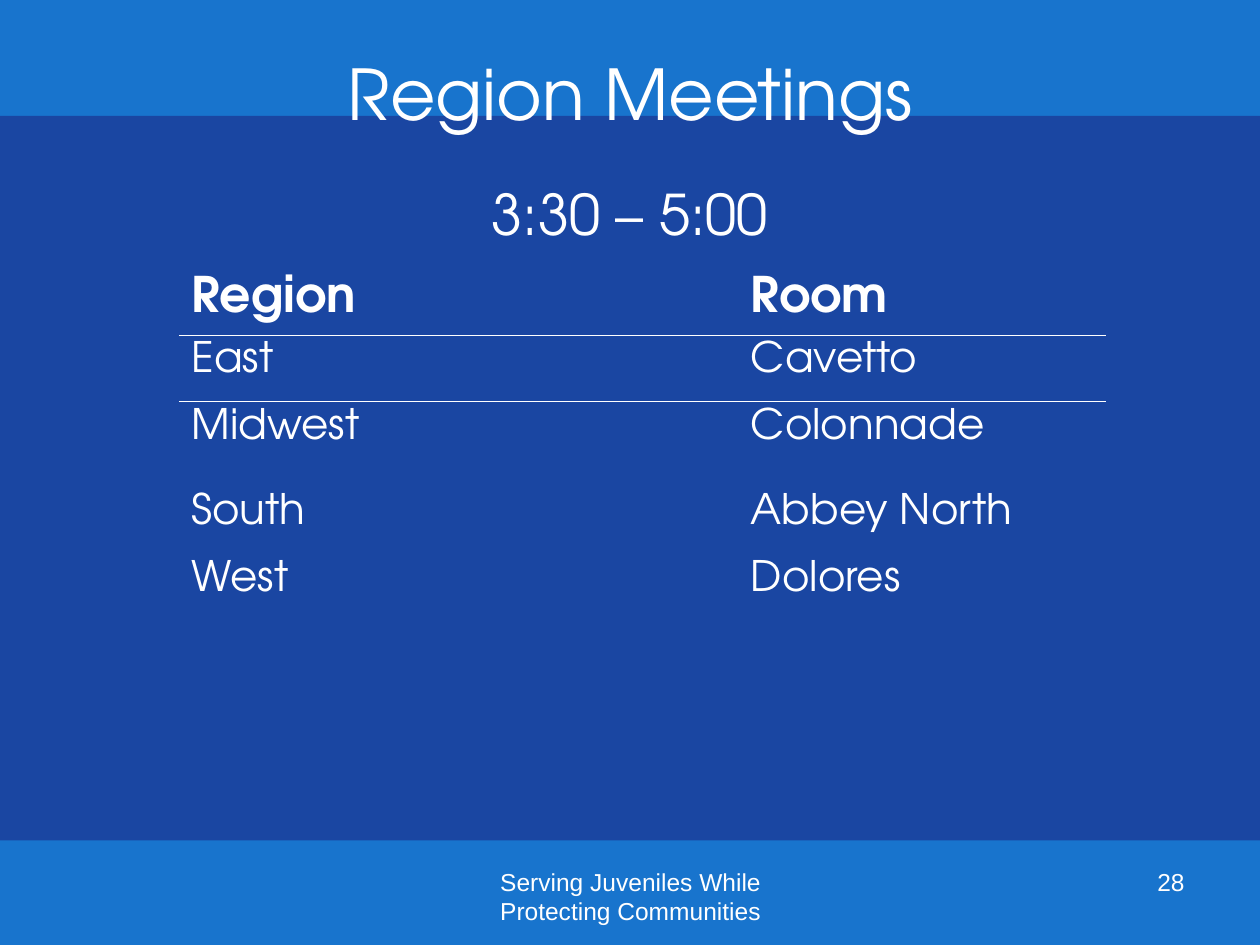
from dataclasses import dataclass

from lxml import etree
from pptx import Presentation
from pptx.dml.color import RGBColor
from pptx.enum.shapes import MSO_SHAPE
from pptx.enum.text import MSO_ANCHOR, PP_ALIGN
from pptx.oxml.ns import qn
from pptx.util import Inches, Pt

CENTER, RIGHT, LEFT = PP_ALIGN.CENTER, PP_ALIGN.RIGHT, PP_ALIGN.LEFT
TOP = MSO_ANCHOR.TOP
RECT = MSO_SHAPE.RECTANGLE

SKY = RGBColor(0x18, 0x74, 0xCD)
NAVY = RGBColor(0x1C, 0x32, 0x90)
WHITE = RGBColor(0xFF, 0xFF, 0xFF)
HEAD_FONT = "TeX Gyre Adventor"
FOOT_FONT = "Arial"


@dataclass
class Line:
    text: str
    size: int
    font: str = HEAD_FONT
    align: PP_ALIGN = LEFT
    bold: bool = False
    gap: float = 0
    pitch: float = 1.0


@dataclass
class Box:
    left: float
    top: float
    width: float
    height: float
    lines: list[Line]


BOXES = [
    Box(3.42, 6.83, 3.17, 0.52,
        [Line("Serving Juveniles While Protecting Communities", 14,
              FOOT_FONT, CENTER)]),
    Box(7.17, 6.83, 2.33, 0.52, [Line("28", 14, FOOT_FONT, RIGHT)]),
    Box(0, 0.02, 10, 2.17,
        [Line("Region Meetings", 40, align=CENTER, pitch=1.5),
         Line("3:30 – 5:00", 32, align=CENTER, gap=6.4, pitch=1.5)]),
]

ROOMS = [
    ("Region", "Room"),
    ("East", "Cavetto"),
    ("Midwest", "Colonnade"),
    ("South", "Abbey North"),
    ("West", "Dolores"),
]
COLS = [4.44, 2.92]
ROWS = [0.52, 0.53, 0.68, 0.53, 0.53]
RULED = (0, 1)  # rows with a rule below


def write(para, line: Line) -> None:
    para.text = line.text
    para.alignment = line.align
    para.line_spacing = line.pitch
    para.space_before = Pt(line.gap)
    font = para.font
    font.name = line.font
    font.size = Pt(line.size)
    font.bold = line.bold
    font.color.rgb = WHITE


def add_box(slide, box: Box) -> None:
    frame = slide.shapes.add_textbox(
        Inches(box.left), Inches(box.top),
        Inches(box.width), Inches(box.height)).text_frame
    frame.word_wrap = True
    for i, line in enumerate(box.lines):
        write(frame.add_paragraph() if i else frame.paragraphs[0], line)


def add_band(slide) -> None:
    band = slide.shapes.add_shape(
        RECT, 0, Inches(0.92), Inches(10), Inches(5.75))
    band.shadow.inherit = False
    band.line.fill.background()
    band.fill.solid()
    band.fill.fore_color.rgb = NAVY
    color = band.fill._xPr.find(".//" + qn("a:srgbClr"))
    etree.SubElement(color, qn("a:alpha"), val="69000")


def set_edge(cell, side: str, shown: bool) -> None:
    """Rule one side of a cell in white, or clear it."""
    edge = etree.SubElement(cell._tc.get_or_add_tcPr(), qn("a:" + side),
                            w=str(Pt(0.75)))
    if shown:
        fill = etree.SubElement(edge, qn("a:solidFill"))
        etree.SubElement(fill, qn("a:srgbClr"), val=str(WHITE))
    else:
        etree.SubElement(edge, qn("a:noFill"))


def add_rooms(slide) -> None:
    table = slide.shapes.add_table(
        len(ROWS), len(COLS), Inches(1.42), Inches(2.14),
        Inches(sum(COLS)), Inches(sum(ROWS))).table
    table.first_row = table.horz_banding = False
    for col, width in zip(table.columns, COLS):
        col.width = Inches(width)
    for r, (row, names) in enumerate(zip(table.rows, ROOMS)):
        row.height = Inches(ROWS[r])
        head = r == 0
        for cell, name in zip(row.cells, names):
            cell.margin_top = Inches(0.05)
            cell.margin_bottom = 0
            cell.vertical_anchor = TOP
            write(cell.text_frame.paragraphs[0],
                  Line(name, 28 if head else 24, bold=head))
            set_edge(cell, "lnL", False)
            set_edge(cell, "lnR", False)
            set_edge(cell, "lnT", r - 1 in RULED)
            set_edge(cell, "lnB", r in RULED)
            cell.fill.background()


def main() -> None:
    deck = Presentation()
    deck.slide_width, deck.slide_height = Inches(10), Inches(7.5)
    slide = deck.slides.add_slide(deck.slide_layouts[6])
    back = slide.background.fill
    back.solid()
    back.fore_color.rgb = SKY
    add_band(slide)
    for box in BOXES:
        add_box(slide, box)
    add_rooms(slide)
    deck.save("out.pptx")


if __name__ == "__main__":
    main()
